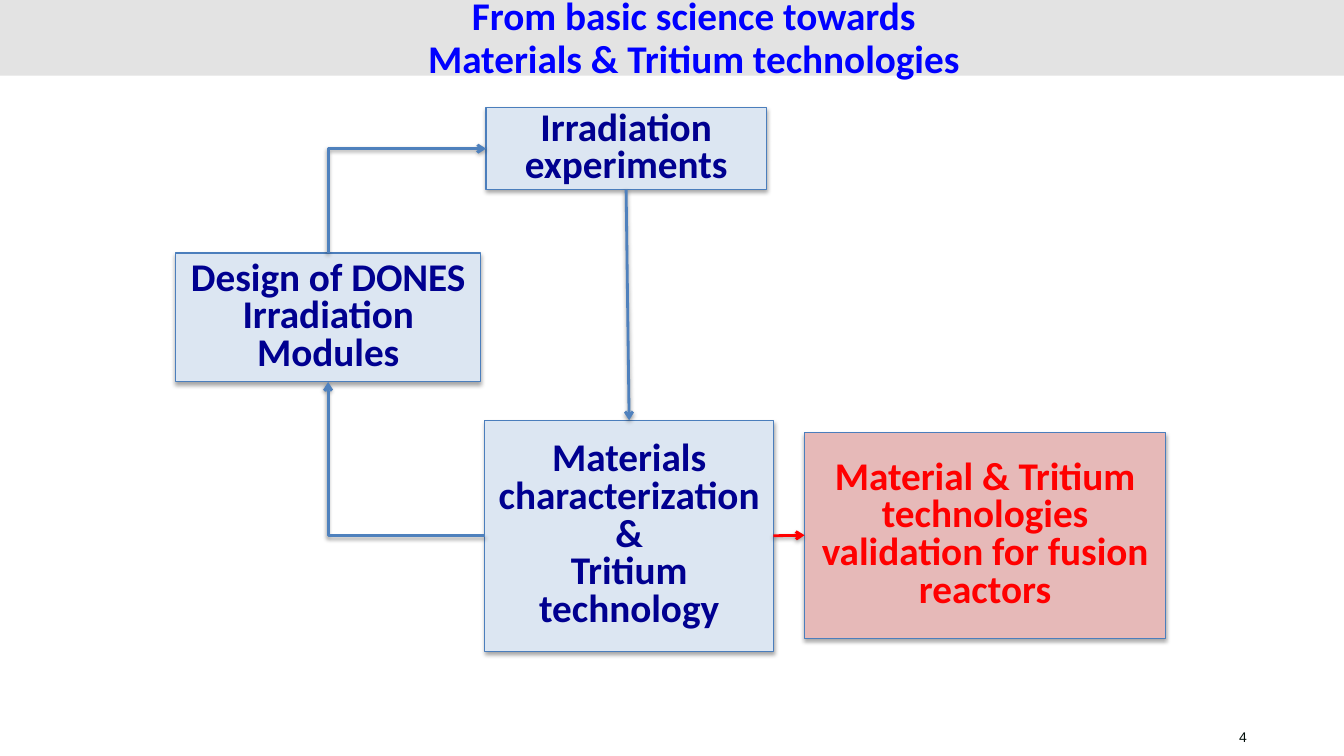
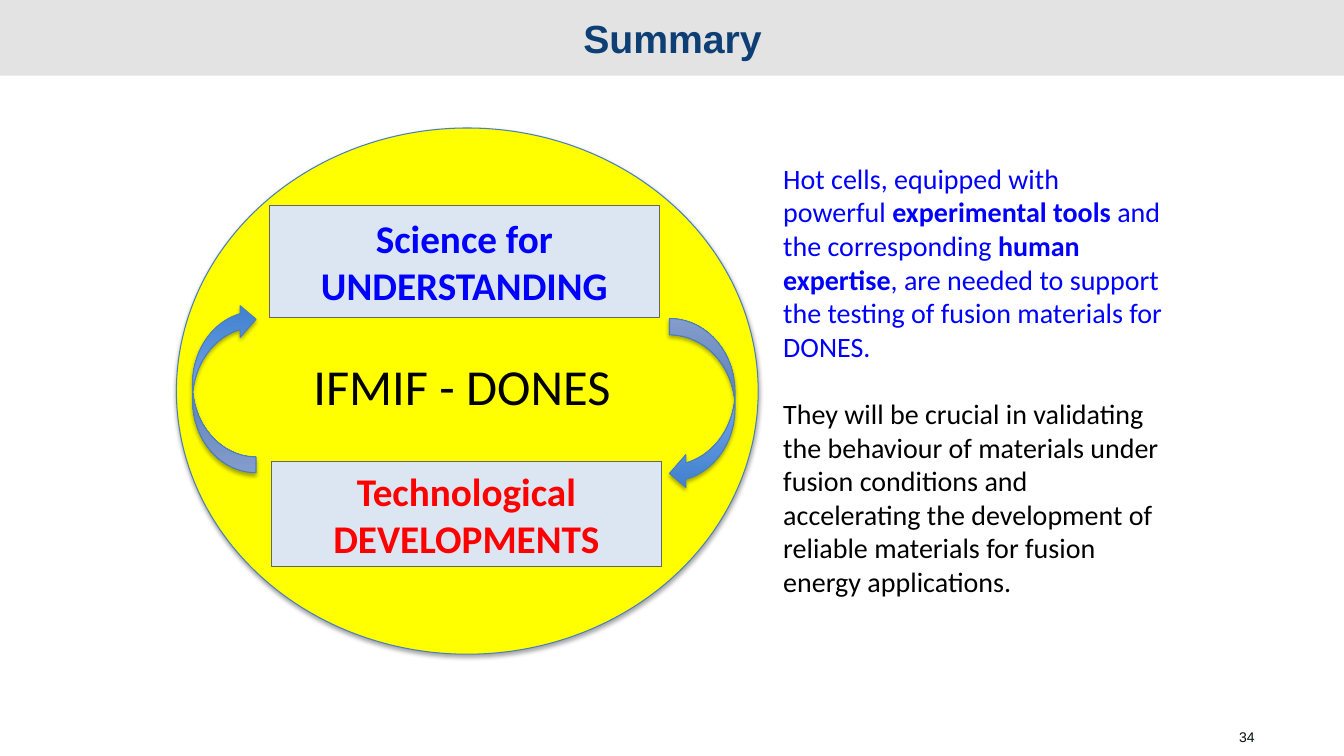
from lxml import etree
from pptx import Presentation
from pptx.dml.color import RGBColor
from pptx.enum.shapes import MSO_CONNECTOR, MSO_SHAPE
from pptx.enum.text import MSO_ANCHOR, PP_ALIGN
from pptx.oxml.ns import qn
from pptx.util import Inches, Pt

RECTANGLE = MSO_SHAPE.RECTANGLE
OVAL = MSO_SHAPE.OVAL
CURVED_ARROW = MSO_SHAPE.CURVED_LEFT_ARROW
STRAIGHT = MSO_CONNECTOR.STRAIGHT
ELBOW = MSO_CONNECTOR.ELBOW
LEFT = PP_ALIGN.LEFT
CENTER = PP_ALIGN.CENTER
TOP = MSO_ANCHOR.TOP
MIDDLE = MSO_ANCHOR.MIDDLE

TOP_SITE, LEFT_SITE, BOTTOM_SITE, RIGHT_SITE = range(4)

BAND_GRAY = RGBColor(0xE3, 0xE3, 0xE3)
NUMBER_INK = RGBColor(0x00, 0x0D, 0x08)
BLACK = RGBColor(0x00, 0x00, 0x00)
BLUE = RGBColor(0x00, 0x00, 0xFF)
NAVY = RGBColor(0x00, 0x00, 0x90)
TITLE_BLUE = RGBColor(0x0D, 0x3F, 0x75)
RED = RGBColor(0xFF, 0x00, 0x00)
YELLOW = RGBColor(0xFF, 0xFF, 0x00)
PALE_BLUE = RGBColor(0xDC, 0xE6, 0xF2)
PALE_RED = RGBColor(0xE6, 0xB9, 0xB8)
OUTLINE_BLUE = RGBColor(0x4B, 0x7E, 0xBC)
OUTLINE_GRAY = RGBColor(0x66, 0x66, 0x66)
ARROW_BLUE = RGBColor(0x4F, 0x81, 0xBD)
GRADIENT = (RGBColor(0x3F, 0x80, 0xCE), RGBColor(0xA4, 0xC4, 0xFF))


def write_text(frame, text, size=28, color=BLACK, font="Calibri", bold=False,
               align=LEFT, spacing=None, gap=0, indent=0):
    for line in text.split("\n"):
        para = frame.add_paragraph() if frame.text else frame.paragraphs[0]
        para.alignment = align
        if spacing:
            para.line_spacing = spacing
        if gap:
            para.space_before = Pt(gap)
        if indent:
            para._p.get_or_add_pPr().set("marL", str(Inches(indent)))
        for index, part in enumerate(line.split("**")):
            span = para.add_run()
            span.text = part
            span.font.name = font
            span.font.size = Pt(size)
            span.font.bold = bold or index % 2 == 1
            span.font.color.rgb = color


def add_shadow(properties, opacity, distance):
    effects = properties.find(qn("a:effectLst"))
    if effects is None:
        effects = etree.SubElement(properties, qn("a:effectLst"))
    shadow = etree.SubElement(
        effects, qn("a:outerShdw"), blurRad=str(Pt(3.1)),
        dist=str(Pt(distance)), dir="5400000", rotWithShape="0")
    color = etree.SubElement(shadow, qn("a:srgbClr"), val=str(BLACK))
    etree.SubElement(color, qn("a:alpha"), val=str(opacity * 1000))


class Slides:
    def __init__(self):
        self.deck = Presentation()
        self.deck.slide_width = Inches(13.33)
        self.deck.slide_height = Inches(7.5)
        self.page = None

    def new_page(self, number):
        self.page = self.deck.slides.add_slide(self.deck.slide_layouts[6])
        self.shape(RECTANGLE, 0, 0, 13.33, 0.75, fill=BAND_GRAY)
        frame = self.text_box(12.19, 7.18, 0.49, 0.27, wrap=False)
        write_text(frame, number, size=10, color=NUMBER_INK, font="Arial")

    def text_box(self, left, top, width, height, wrap=True):
        box = self.page.shapes.add_textbox(
            Inches(left), Inches(top), Inches(width), Inches(height))
        box.text_frame.word_wrap = wrap
        box.text_frame.vertical_anchor = TOP
        return box.text_frame

    def title(self, left, top, width, height, text, **style):
        frame = self.text_box(left, top, width, height)
        write_text(frame, text, bold=True, align=CENTER, **style)

    def shape(self, kind, left, top, width, height, fill=None, outline=None,
              shadow=False):
        shape = self.page.shapes.add_shape(
            kind, Inches(left), Inches(top), Inches(width), Inches(height))
        if fill:
            shape.fill.solid()
            shape.fill.fore_color.rgb = fill
        if outline:
            shape.line.color.rgb = outline
            shape.line.width = Pt(0.75)
        else:
            shape.line.fill.background()
        shape.shadow.inherit = False
        if shadow:
            add_shadow(shape._element.spPr, 35, 1.8)
        return shape

    def label_box(self, left, top, width, height, text, color, fill=PALE_BLUE,
                  outline=OUTLINE_BLUE, shadow=True, spacing=0.8):
        box = self.shape(RECTANGLE, left, top, width, height, fill, outline, shadow)
        box.text_frame.word_wrap = True
        box.text_frame.vertical_anchor = MIDDLE
        write_text(box.text_frame, text, color=color, bold=True, align=CENTER,
                   spacing=spacing)
        return box

    def curved_arrow(self, left, top, width, height, flipped=False):
        arrow = self.shape(CURVED_ARROW, left, top, width, height,
                           outline=OUTLINE_BLUE, shadow=True)
        arrow.fill.gradient()
        arrow.fill.gradient_angle = 90
        for stop, color in zip(arrow.fill.gradient_stops, GRADIENT):
            stop.color.rgb = color
        if flipped:
            frame = arrow._element.spPr.find(qn("a:xfrm"))
            frame.set("flipH", "1")
            frame.set("flipV", "1")

    def connect(self, source, source_site, target, target_site,
                color=ARROW_BLUE, kind=STRAIGHT):
        connector = self.page.shapes.add_connector(kind, 0, 0, 0, 0)
        connector.begin_connect(source, source_site)
        connector.end_connect(target, target_site)
        connector.line.color.rgb = color
        connector.line.width = Pt(2)
        etree.SubElement(connector.line._get_or_add_ln(), qn("a:tailEnd"), type="arrow")
        properties = connector._element.spPr
        add_shadow(properties, 38, 1.6)
        if kind == ELBOW:
            properties.find(qn("a:prstGeom")).set("prst", "bentConnector2")
            if source_site == TOP_SITE:
                self.turn_upright(connector)

    def turn_upright(self, connector):
        width, height = connector.width, connector.height
        shift = (width - height) // 2
        connector.left += shift
        connector.top -= shift
        connector.width, connector.height = height, width
        frame = connector._element.spPr.find(qn("a:xfrm"))
        frame.set("rot", "5400000")
        frame.set("flipH", "1")
        frame.set("flipV", "1")


def build_technologies(slides):
    slides.new_page("4")
    slides.title(2.67, -0.08, 8.25, 0.96,
                 "From basic science towards\nMaterials & Tritium technologies",
                 color=BLUE, spacing=0.9, indent=0.17)
    design = slides.label_box(1.74, 2.51, 3.03, 1.28,
                              "Design of DONES Irradiation Modules", NAVY)
    experiments = slides.label_box(4.82, 1.07, 2.78, 0.81,
                                   "Irradiation experiments", NAVY)
    materials = slides.label_box(
        4.81, 4.17, 2.86, 2.29,
        "Materials characterization\n&\nTritium technology", NAVY)
    validation = slides.label_box(
        7.98, 4.29, 3.58, 2.04,
        "Material & Tritium technologies validation for fusion reactors",
        RED, fill=PALE_RED)
    slides.connect(design, TOP_SITE, experiments, LEFT_SITE, kind=ELBOW)
    slides.connect(experiments, BOTTOM_SITE, materials, TOP_SITE)
    slides.connect(materials, LEFT_SITE, design, BOTTOM_SITE, kind=ELBOW)
    slides.connect(materials, RIGHT_SITE, validation, LEFT_SITE, color=RED)


def build_summary(slides):
    slides.new_page("34")
    slides.title(3.42, 0.18, 6.5, 0.48, "Summary", color=TITLE_BLUE,
                 font="Arial", spacing=0.8)
    slides.shape(OVAL, 1.75, 1.27, 5.77, 5.22, YELLOW, OUTLINE_BLUE, shadow=True)
    goal_style = dict(outline=OUTLINE_GRAY, shadow=False, spacing=None)
    slides.label_box(2.69, 4.58, 3.87, 1.04, "Technological DEVELOPMENTS", RED,
                     **goal_style)
    slides.label_box(2.67, 2.04, 3.87, 1.11, "Science for UNDERSTANDING", BLUE,
                     **goal_style)
    slides.curved_arrow(6.64, 3.16, 0.65, 1.7)
    slides.curved_arrow(1.91, 3.01, 0.63, 1.68, flipped=True)
    write_text(slides.text_box(3.01, 3.47, 3.29, 0.71), "IFMIF - DONES", size=36)
    message = slides.text_box(7.67, 1.55, 3.96, 4.48)
    write_text(message,
               "Hot cells, equipped with powerful **experimental tools **and the "
               "corresponding **human expertise**, are needed to support the "
               "testing of fusion materials for DONES.", size=20, color=BLUE)
    write_text(message,
               "They will be crucial in validating the behaviour of materials "
               "under fusion conditions and accelerating the development of "
               "reliable materials for fusion energy applications.",
               size=20, gap=24)


def main():
    slides = Slides()
    build_technologies(slides)
    build_summary(slides)
    slides.deck.save("out.pptx")


if __name__ == "__main__":
    main()
